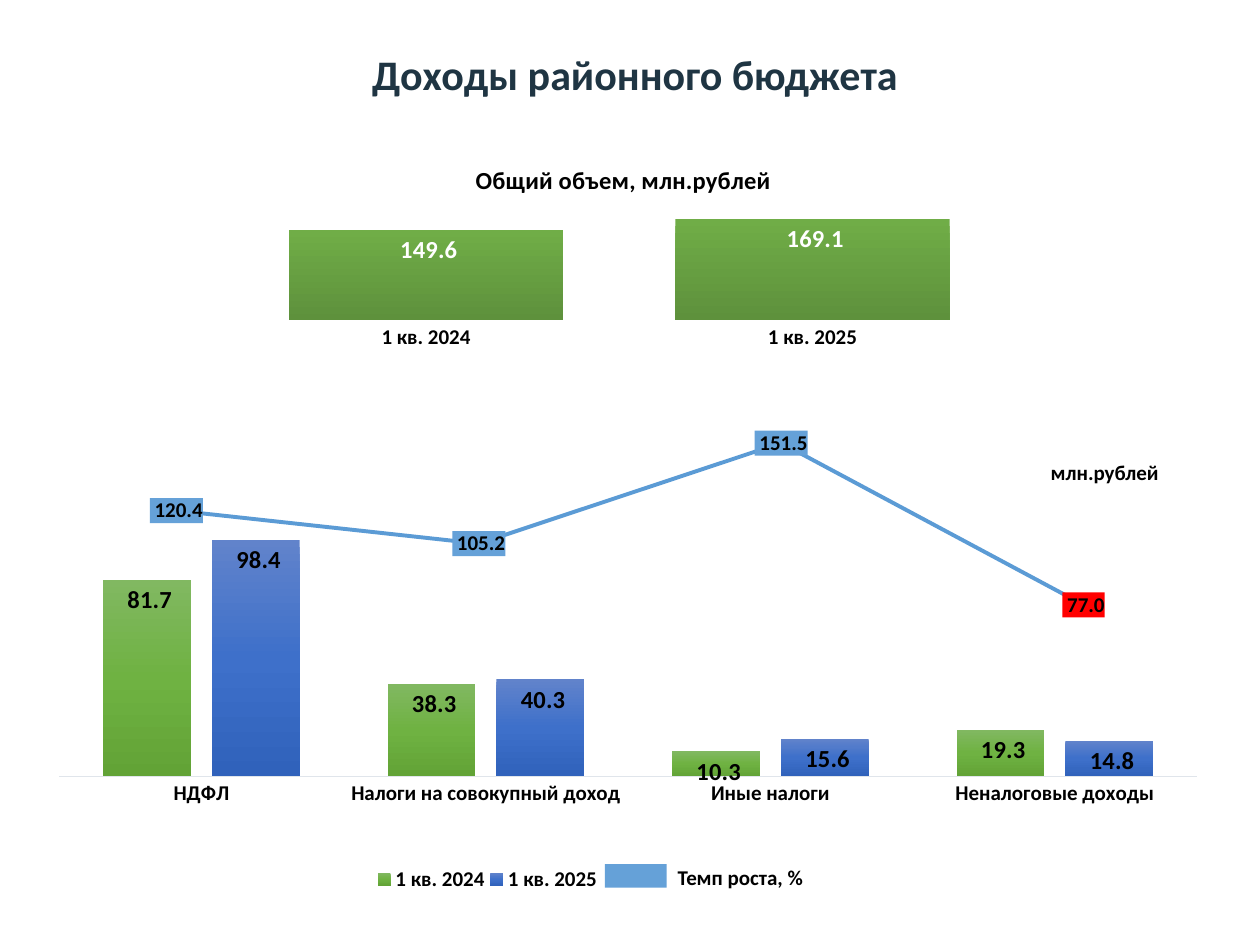
from lxml.etree import SubElement
from pptx import Presentation
from pptx.chart.data import CategoryChartData
from pptx.dml.color import RGBColor
from pptx.enum.chart import XL_CHART_TYPE, XL_LABEL_POSITION, XL_LEGEND_POSITION, XL_MARKER_STYLE, XL_TICK_MARK
from pptx.enum.shapes import MSO_SHAPE
from pptx.enum.text import MSO_ANCHOR, PP_ALIGN
from pptx.oxml import parse_xml
from pptx.oxml.ns import nsdecls, qn
from pptx.util import Inches, Pt

SLIDE_W, SLIDE_H = Inches(10), Inches(7.5)
FACE = "Calibri"
NUMBER = "#\\ ##0.0"
BLACK = RGBColor(0x00, 0x00, 0x00)
WHITE = RGBColor(0xFF, 0xFF, 0xFF)
NAVY = RGBColor(0x1F, 0x35, 0x43)
AXIS_GREY = RGBColor(0xE0, 0xE5, 0xEB)
GROWTH_LINE = RGBColor(0x5B, 0x9B, 0xD5)
GROWTH_LABEL = RGBColor(0x65, 0xA1, 0xD8)
DECLINE_LABEL = RGBColor(0xFF, 0x00, 0x00)
TOTAL_GREEN = (RGBColor(0x70, 0xAD, 0x47), RGBColor(0x5E, 0x91, 0x3C))
GREEN = (RGBColor(0x81, 0xB8, 0x61), RGBColor(0x6F, 0xB2, 0x42), RGBColor(0x62, 0xA3, 0x36))
BLUE = (RGBColor(0x61, 0x83, 0xCB), RGBColor(0x3E, 0x70, 0xCA), RGBColor(0x30, 0x62, 0xBB))
QUARTERS = ("1 кв. 2024", "1 кв. 2025")


def within(box, x, y, w, h):
    left, top, width, height = box
    return left + x * width, top + y * height, w * width, h * height


def to_slide(box):
    x, y, w, h = box
    return int(x * SLIDE_W), int(y * SLIDE_H), int(w * SLIDE_W), int(h * SLIDE_H)


def style_font(font, size, color=BLACK, bold=True):
    font.name, font.size, font.bold = FACE, Pt(size), bold
    font.color.rgb = color


def add_text(slide, box, text, size=12, color=BLACK, align=PP_ALIGN.LEFT,
             anchor=MSO_ANCHOR.TOP, wrap=True, spacing=None):
    frame = slide.shapes.add_textbox(*to_slide(box)).text_frame
    frame.word_wrap, frame.vertical_anchor = wrap, anchor
    paragraph = frame.paragraphs[0]
    paragraph.alignment, paragraph.line_spacing = align, spacing
    run = paragraph.add_run()
    run.text = text
    style_font(run.font, size, color)


def set_layout(parent, inner=False, **shares):
    for old in parent.findall(qn("c:layout")):
        parent.remove(old)
    layout = parse_xml(f"<c:layout {nsdecls('c')}/>")
    manual = SubElement(layout, qn("c:manualLayout"))
    if inner:
        SubElement(manual, qn("c:layoutTarget"), val="inner")
    for side in ("x", "y"):
        SubElement(manual, qn(f"c:{side}Mode"), val="edge")
    for side, share in shares.items():
        SubElement(manual, qn(f"c:{side}"), val=str(share))
    before = parent.find(qn("c:tx"))
    if before is None:
        before = parent.find(qn("c:legendPos"))
    if before is None:
        parent.insert(0, layout)
    else:
        before.addnext(layout)


def fill_gradient(series, colors):
    series.format.fill.solid()
    solid = series.format.fill._xPr.find(qn("a:solidFill"))
    last = len(colors) - 1
    stops = "".join(
        f'<a:gs pos="{100000 * i // last}"><a:srgbClr val="{color}"/></a:gs>'
        for i, color in enumerate(colors))
    solid.getparent().replace(solid, parse_xml(
        f'<a:gradFill {nsdecls("a")} rotWithShape="1"><a:gsLst>{stops}</a:gsLst>'
        '<a:lin ang="5400000" scaled="0"/></a:gradFill>'))


def label_values(series, position, size, color=BLACK):
    labels = series.data_labels
    labels.show_value = True
    labels.number_format, labels.number_format_is_linked = NUMBER, False
    labels.position = position
    style_font(labels.font, size, color)


def add_plain_chart(slide, box, kind, categories, series, top, size, plot_area):
    data = CategoryChartData(number_format=NUMBER)
    data.categories = categories
    for name, values in series:
        data.add_series(name, values)
    chart = slide.shapes.add_chart(kind, *to_slide(box), data).chart
    style_font(chart.font, size, bold=False)
    chart.has_title = chart.has_legend = False
    values_axis = chart.value_axis
    values_axis.visible = values_axis.has_major_gridlines = False
    values_axis.minimum_scale, values_axis.maximum_scale = 0, top
    values_axis.tick_labels.number_format = NUMBER
    values_axis.tick_labels.number_format_is_linked = False
    chart.plots[0].vary_by_categories = False
    area = chart._chartSpace.find(f".//{qn('c:plotArea')}")
    set_layout(area, inner=True, **dict(zip("xywh", plot_area)))
    return chart


def add_columns(slide, box, categories, series, gradients, label_color, gap, **options):
    chart = add_plain_chart(slide, box, XL_CHART_TYPE.COLUMN_CLUSTERED, categories, series, **options)
    axis = chart.category_axis
    axis.major_tick_mark = XL_TICK_MARK.NONE
    style_font(axis.tick_labels.font, 12)
    chart.plots[0].gap_width = gap
    for columns, colors in zip(chart.plots[0].series, gradients):
        fill_gradient(columns, colors)
        columns.invert_if_negative = False
        label_values(columns, XL_LABEL_POSITION.INSIDE_END, 14, label_color)
    return chart


def add_totals(slide, box):
    chart = add_columns(slide, box, QUARTERS, [("Series 1", (149.6, 169.1))], [TOTAL_GREEN],
                        WHITE, 41, top=200, size=10, plot_area=(0.02, 0.285, 0.96, 0.557))
    chart.category_axis.format.line.fill.background()
    chart.has_title = True
    title = chart.chart_title
    run = title.text_frame.paragraphs[0].add_run()
    run.text = "Общий объем, млн.рублей"
    style_font(run.font, 14)
    set_layout(title._element, x=0.316, y=0.09)


def add_growth_line(slide, box):
    chart = add_plain_chart(slide, box, XL_CHART_TYPE.LINE_MARKERS_STACKED, ("1", "2", "3", "4"),
                            [("Series 1", (120.4, 105.2, 151.5, 77.0))],
                            top=160, size=10, plot_area=(0.02, 0.018, 0.96, 0.962))
    chart.category_axis.visible = False
    growth = chart.plots[0].series[0]
    growth.smooth = False
    growth.format.line.width = Pt(2.25)
    growth.format.line.color.rgb = GROWTH_LINE
    growth.marker.style, growth.marker.size = XL_MARKER_STYLE.CIRCLE, 5
    for part in (growth.marker.format.fill, growth.marker.format.line.fill):
        part.solid()
        part.fore_color.rgb = GROWTH_LINE
    label_values(growth, XL_LABEL_POSITION.CENTER, 12)
    decline = growth.points[3].data_label
    style_font(decline.font, 12)
    decline.position = XL_LABEL_POSITION.CENTER
    for text_format in growth._element.findall(f".//{qn('c:dLbls')}//{qn('c:txPr')}"):
        label = text_format.getparent()
        single = label.tag == qn("c:dLbl")
        for old in label.findall(qn("c:spPr")):
            label.remove(old)
        if single:
            text_format.addprevious(parse_xml(
                f'<c:numFmt {nsdecls("c")} formatCode="{NUMBER}" sourceLinked="0"/>'))
        color = DECLINE_LABEL if single else GROWTH_LABEL
        text_format.addprevious(parse_xml(
            f'<c:spPr {nsdecls("c", "a")}><a:solidFill><a:srgbClr val="{color}"/></a:solidFill></c:spPr>'))


def add_revenue_sources(slide, box):
    add_text(slide, within(box, 0.824, 0.158, 0.107, 0.07), "млн.рублей", wrap=False)
    chart = add_columns(
        slide, within(box, 0.032, 0.006, 0.934, 0.992),
        ("НДФЛ", "Налоги на совокупный доход", "Иные налоги", "Неналоговые доходы"),
        list(zip(QUARTERS, ((81.7, 38.3, 10.3, 19.3), (98.4, 40.3, 15.6, 14.8)))),
        (GREEN, BLUE), BLACK, 100, top=120, size=10.5, plot_area=(0.016, 0.218, 0.967, 0.539))
    chart.plots[0].overlap = -24
    chart.category_axis.format.line.color.rgb = AXIS_GREY
    chart.category_axis.format.line.width = Pt(0.75)
    chart.has_legend = True
    chart.legend.position = XL_LEGEND_POSITION.BOTTOM
    chart.legend.include_in_layout = False
    style_font(chart.legend.font, 12)
    set_layout(chart.legend._element, x=0.282, y=0.92, w=0.196, h=0.06)
    key = slide.shapes.add_shape(MSO_SHAPE.RECTANGLE, *to_slide(within(box, 0.48, 0.92, 0.049, 0.044)))
    key.shadow.inherit = False
    key.fill.solid()
    key.fill.fore_color.rgb = GROWTH_LABEL
    key.line.fill.background()
    add_text(slide, within(box, 0.528, 0.909, 0.178, 0.07), "Темп роста, %")
    add_growth_line(slide, within(box, 0, 0.092, 1, 0.671))


def main():
    deck = Presentation()
    deck.slide_width, deck.slide_height = SLIDE_W, SLIDE_H
    slide = deck.slides.add_slide(deck.slide_layouts[6])
    add_text(slide, (0.004, 0.041, 1, 0.08), "Доходы районного бюджета", size=24, color=NAVY,
             align=PP_ALIGN.CENTER, anchor=MSO_ANCHOR.MIDDLE, spacing=0.9)
    add_totals(slide, (0.172, 0.147, 0.639, 0.228))
    add_revenue_sources(slide, (0, 0.39, 1, 0.57))
    deck.save("out.pptx")


if __name__ == "__main__":
    main()
